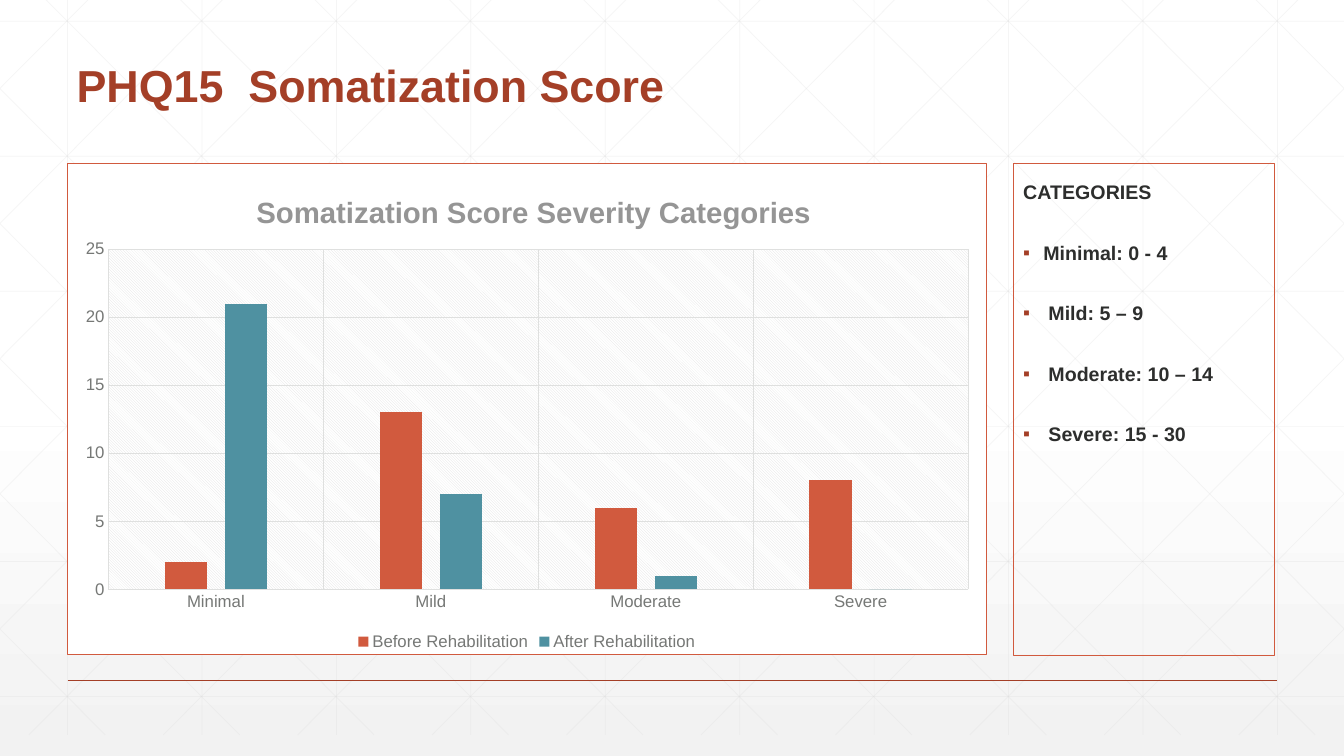
from pptx import Presentation
from pptx.chart.data import CategoryChartData
from pptx.dml.color import RGBColor
from pptx.enum.chart import XL_CHART_TYPE, XL_LEGEND_POSITION, XL_TICK_MARK
from pptx.enum.shapes import MSO_CONNECTOR, MSO_SHAPE
from pptx.enum.text import MSO_ANCHOR, PP_ALIGN
from pptx.oxml import parse_xml
from pptx.oxml.ns import nsdecls, qn
from pptx.util import Inches, Pt
from lxml import etree
from copy import deepcopy

WIDTH, HEIGHT = 13.33, 7.5
GRID_TOP, GRID_BOTTOM = -0.21, 7.29
STEP = 4 / 3
RUST, ORANGE, TEAL = "A43F27", "D15A3E", "4F91A1"
INK, GREY, PALE, TITLE_GREY = "2D2E2D", "767876", "DFE0DF", "959595"


def rgb(value):
    return RGBColor.from_string(value)


class SlideBuilder:
    font = "Arial"

    def __init__(self, prs):
        self.s = prs.slides.add_slide(prs.slide_layouts[5])

    def style(self, font, size, color, bold=False):
        font.name, font.size, font.bold = self.font, Pt(size), bold
        font.color.rgb = rgb(color)

    def run(self, p, text, size, color, bold=True):
        r = p.add_run()
        r.text = text
        self.style(r.font, size, color, bold)

    def background(self, stops):
        fill = self.s.background.fill
        fill.gradient()
        fill.gradient_angle = 270
        stop_list = next(self.s.background._cSld.iter(qn("a:gsLst")))
        while len(stop_list) < len(stops):
            stop_list.append(deepcopy(stop_list[0]))
        for stop, (position, color) in zip(fill.gradient_stops, stops):
            stop.position = position
            stop.color.rgb = rgb(color)

    def line(self, x1, y1, x2, y2, color, width, opacity=None):
        c = self.s.shapes.add_connector(
            MSO_CONNECTOR.STRAIGHT, Inches(x1), Inches(y1), Inches(x2), Inches(y2))
        c.line.color.rgb = rgb(color)
        c.line.width = Pt(width)
        spPr = c._element.spPr
        etree.SubElement(spPr, qn("a:effectLst"))
        if opacity:
            color_node = next(spPr.iter(qn("a:srgbClr")))
            etree.SubElement(color_node, qn("a:alpha")).set("val", str(opacity * 1000))

    def grid(self):
        faint = ("D9D9D9", 0.5, 25)
        for i in range(10):
            x = 0.67 + i * STEP
            self.line(x, GRID_TOP, x, GRID_BOTTOM, *faint)
        for i in range(6):
            y = 0.21 + i * 1.34
            self.line(0, y, WIDTH, y, *faint)
        run = 7.46
        slope = (GRID_BOTTOM - GRID_TOP) / run
        for i in range(-5, 10):
            start = 0.25 + i * STEP
            x1, x2 = max(start, 0), min(start + run, WIDTH)
            y1, y2 = (GRID_TOP + (x - start) * slope for x in (x1, x2))
            self.line(x1, y1, x2, y2, *faint)
            self.line(WIDTH - x1, y1, WIDTH - x2, y2, *faint)

    def title(self, text, x, y, w, h):
        sp = self.s.shapes.title
        self.s.shapes._spTree.append(sp._element)
        sp.left, sp.top, sp.width, sp.height = map(Inches, (x, y, w, h))
        tf = sp.text_frame
        tf.word_wrap = True
        tf.vertical_anchor = MSO_ANCHOR.BOTTOM
        p = tf.paragraphs[0]
        p.alignment = PP_ALIGN.LEFT
        p.line_spacing = 0.9
        self.run(p, text, 32, RUST)

    def layout(self, parent, index, **fractions):
        old = parent.find(qn("c:layout"))
        if old is not None:
            parent.remove(old)
        parts = "".join(f'<c:{k} val="{v}"/>' for k, v in fractions.items())
        target = '<c:layoutTarget val="inner"/>' if "w" in fractions else ""
        parent.insert(index, parse_xml(
            f'<c:layout {nsdecls("c")}><c:manualLayout>{target}<c:xMode val="edge"/>'
            f'<c:yMode val="edge"/>{parts}</c:manualLayout></c:layout>'))

    def area(self, fill, border=""):
        return parse_xml(f'<c:spPr {nsdecls("c", "a")}>{fill}{border}</c:spPr>')

    def axis(self, axis):
        axis.major_tick_mark = axis.minor_tick_mark = XL_TICK_MARK.NONE
        axis.has_major_gridlines = True
        line = axis.major_gridlines.format.line
        line.color.rgb = rgb(PALE)
        line.width = Pt(0.75)
        self.style(axis.tick_labels.font, 12, GREY)

    def chart(self, title, cats, series, x, y, w, h):
        data = CategoryChartData(number_format="###0")
        data.categories = cats
        for name, values, _ in series:
            data.add_series(name, values)
        chart = self.s.shapes.add_chart(
            XL_CHART_TYPE.COLUMN_CLUSTERED, Inches(x), Inches(y), Inches(w), Inches(h), data).chart
        self.style(chart.font, 10, INK)
        chart.has_title = True
        self.run(chart.chart_title.text_frame.paragraphs[0], title, 21, TITLE_GREY)
        chart.chart_title.include_in_layout = False
        self.layout(chart.chart_title._element, 1, x=0.2, y=0.05)
        chart.has_legend = True
        chart.legend.position = XL_LEGEND_POSITION.BOTTOM
        chart.legend.include_in_layout = False
        self.style(chart.legend.font, 12, GREY)
        plot = chart.plots[0]
        plot.gap_width, plot.overlap, plot.vary_by_categories = 267, -43, False
        for item, (_, _, color) in zip(plot.series, series):
            item.format.fill.solid()
            item.format.fill.fore_color.rgb = rgb(color)
        cat, val = chart.category_axis, chart.value_axis
        self.axis(cat)
        self.axis(val)
        cat.format.line.color.rgb = rgb(PALE)
        cat.format.line.width = Pt(0.75)
        val.format.line.fill.background()
        val.minimum_scale, val.maximum_scale, val.major_unit = 0, 25, 5
        val.tick_labels.number_format = "###0"
        val.tick_labels.number_format_is_linked = False
        white = '<a:srgbClr val="FFFFFF"/>'
        space = chart._chartSpace
        plot_area = space.chart.plotArea
        self.layout(plot_area, 0, x=0.045, y=0.174, w=0.935, h=0.693)
        plot_area.append(self.area(
            f'<a:pattFill prst="ltDnDiag"><a:fgClr><a:srgbClr val="{PALE}"/></a:fgClr>'
            f'<a:bgClr>{white}</a:bgClr></a:pattFill>'))
        space.chart.addnext(self.area(
            f'<a:solidFill>{white}</a:solidFill>',
            f'<a:ln w="{Pt(0.75)}"><a:solidFill><a:srgbClr val="{ORANGE}"/></a:solidFill></a:ln>'))

    def bullet(self, p, indent):
        pPr = p._p.get_or_add_pPr()
        pPr.set("marL", str(Inches(indent)))
        pPr.set("indent", str(-Inches(indent)))
        color = etree.SubElement(pPr, qn("a:buClr"))
        etree.SubElement(color, qn("a:srgbClr")).set("val", RUST)
        etree.SubElement(pPr, qn("a:buFont")).set("typeface", self.font)
        etree.SubElement(pPr, qn("a:buChar")).set("char", "▪")

    def box(self, heading, items, x, y, w, h):
        sp = self.s.shapes.add_shape(
            MSO_SHAPE.RECTANGLE, Inches(x), Inches(y), Inches(w), Inches(h))
        sp.shadow.inherit = False
        sp.fill.background()
        sp.line.color.rgb = rgb(ORANGE)
        sp.line.width = Pt(0.75)
        tf = sp.text_frame
        tf.word_wrap = True
        tf.vertical_anchor = MSO_ANCHOR.TOP
        for i, (text, indent) in enumerate([(heading, 0)] + items):
            p = tf.add_paragraph() if i else tf.paragraphs[0]
            p.alignment = PP_ALIGN.LEFT
            p.line_spacing = 1.5
            p.space_before = Pt(18)
            if indent:
                self.bullet(p, indent)
            self.run(p, text, 14, INK)


def main():
    prs = Presentation()
    prs.slide_width, prs.slide_height = Inches(WIDTH), Inches(HEIGHT)
    b = SlideBuilder(prs)
    b.background([(0, "FFFFFF"), (0.53, "FFFFFF"), (1, "F2F2F2")])
    b.grid()
    b.line(0.67, 6.75, 12.67, 6.75, RUST, 1)
    b.title("PHQ15  Somatization Score", 0.66, 0.49, 10.5, 0.67)
    b.chart("Somatization Score Severity Categories",
            ["Minimal", "Mild", "Moderate", "Severe"],
            [("Before Rehabilitation", (2, 13, 6, 8), ORANGE),
             ("After Rehabilitation", (21, 7, 1, 0), TEAL)],
            0.66, 1.62, 9.13, 4.88)
    b.box("CATEGORIES",
          [("Minimal: 0 - 4", 0.2), ("Mild: 5 – 9", 0.25),
           ("Moderate: 10 – 14", 0.25), ("Severe: 15 - 30", 0.25)],
          10.05, 1.62, 2.59, 4.88)
    prs.save("out.pptx")


if __name__ == "__main__":
    main()
